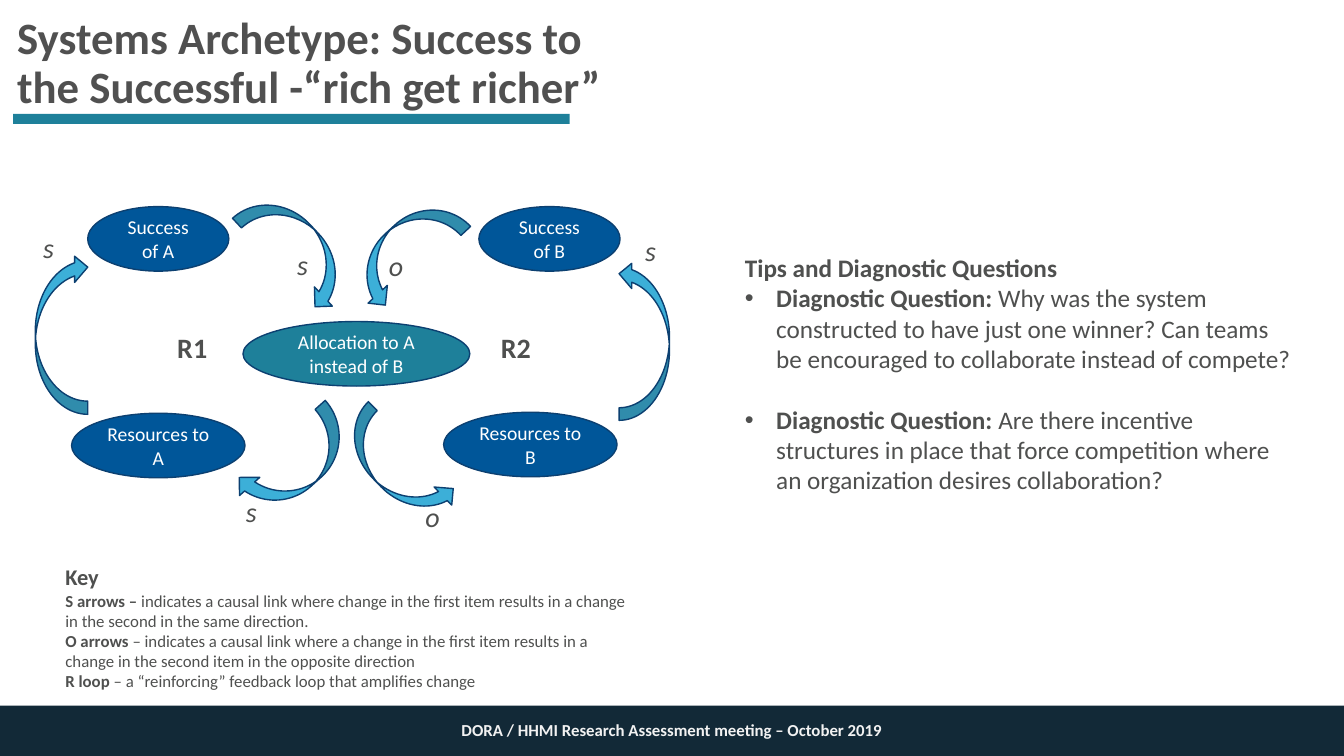
"""Build the "Success to the Successful" systems archetype slide."""
from dataclasses import dataclass

from lxml import etree
from pptx import Presentation
from pptx.dml.color import RGBColor
from pptx.enum.shapes import MSO_SHAPE
from pptx.enum.text import MSO_ANCHOR, MSO_AUTO_SIZE, PP_ALIGN
from pptx.oxml.ns import qn
from pptx.util import Inches, Pt

RECT, OVAL, ARROW = MSO_SHAPE.RECTANGLE, MSO_SHAPE.OVAL, MSO_SHAPE.CURVED_RIGHT_ARROW
LEFT, CENTER = PP_ALIGN.LEFT, PP_ALIGN.CENTER
TOP, MIDDLE = MSO_ANCHOR.TOP, MSO_ANCHOR.MIDDLE
NO_AUTOFIT = MSO_AUTO_SIZE.NONE


@dataclass(frozen=True)
class Theme:
    """Font, colours and type sizes of the slide."""
    font: str = "Calibri"
    heading: str = "505050"
    body: str = "4F504F"
    white: str = "FFFFFF"
    footer_ink: str = "F2F2F2"
    footer: str = "122937"
    teal: str = "1E809A"
    blue: str = "005699"
    sky: str = "3CAFD8"
    outline: str = "0C4071"
    title_size: int = 32
    label_size: int = 20
    tips_size: int = 18
    key_size: int = 16
    node_size: int = 14
    small_size: int = 12


THEME = Theme()
CELL = Inches(0.1)
COLUMNS, ROWS = 133.3, 75
FOOTER_ROW = 70
NODE_HEIGHT = 6.4
LABEL_HEIGHT = 5.1

TITLE = "Systems Archetype: Success to the Successful -“rich get richer”"
FOOTER = "DORA / HHMI Research Assessment meeting – October 2019"

TIPS_HEADING = "Tips and Diagnostic Questions"
TIPS = [
    [("Diagnostic Question:", True),
     (" Why was the system constructed to have just one winner? Can teams be "
      "encouraged to collaborate instead of compete?", False)],
    [("Diagnostic Question: ", True),
     ("Are there incentive structures in place that force competition where an "
      "organization desires collaboration?", False)],
]

KEY_HEADING = "Key"
KEY = [
    [("S arrows – ", True),
     ("indicates a causal link where change in the first item results in a "
      "change in the second in the same direction.", False)],
    [("O arrows ", True),
     ("– indicates a causal link where a change in the first item results in a "
      "change in the second item in the opposite direction", False)],
    [("R loop", True),
     (" – a “reinforcing” feedback loop that amplifies change", False)],
]

# (text, column, row, columns wide, fill)
NODES = [
    ("Allocation to A instead of B", 24.1, 31.9, 22.5, THEME.teal),
    ("Success of A", 8.7, 20.5, 14, THEME.blue),
    ("Success of B", 47.5, 20.5, 14, THEME.blue),
    ("Resources to A", 7.1, 41, 17.2, THEME.blue),
    ("Resources to B", 44, 40.9, 17.2, THEME.blue),
]

# (column, row, columns wide, rows high, rotation, mirrored)
ARROWS = [
    (26.9, 18.1, 5.2, 13.3, 317, True),
    (26.6, 39.6, 5.4, 12.8, 48.1, True),
    (3.5, 25.2, 5.2, 15.9, 180, True),
    (36.9, 39.7, 5, 13.3, 315.7, False),
    (61.4, 25.9, 5, 15.8, 180, False),
    (37.6, 18.5, 5.2, 12.8, 47.3, False),
]

LOOPS = [("R1", 16.6, 32.3), ("R2", 48.7, 32.3)]
LINKS = [
    ("s", 28.5, 24.1), ("s", 23.4, 48.6), ("s", 3.3, 22.4), ("s", 63, 22.7),
    ("o", 41.2, 49.1), ("o", 37.6, 24.2),
]


def cells(*counts):
    """Turn grid counts into lengths."""
    return [round(count * CELL) for count in counts]


def write(frame, text, size, color=THEME.body, bold=False, italic=False,
          align=LEFT, anchor=TOP, before=0, spacing=None, bullet=False):
    """Add one paragraph, given as a string or as (text, bold) runs."""
    frame.word_wrap = True
    frame.auto_size = NO_AUTOFIT
    frame.vertical_anchor = anchor
    paragraph = frame.paragraphs[0] if not frame.text else frame.add_paragraph()
    if bullet:
        properties = paragraph._p.get_or_add_pPr()
        properties.set("marL", str(Inches(0.31)))
        properties.set("indent", str(-Inches(0.31)))
        etree.SubElement(properties, qn("a:buFont")).set("typeface", "Arial")
        etree.SubElement(properties, qn("a:buChar")).set("char", "•")
    paragraph.alignment = align
    paragraph.space_before = Pt(before)
    if spacing:
        paragraph.line_spacing = spacing
    for words, strong in [(text, bold)] if isinstance(text, str) else text:
        run = paragraph.add_run()
        run.text = words
        run.font.name, run.font.size = THEME.font, Pt(size)
        run.font.bold, run.font.italic = strong, italic
        run.font.color.rgb = RGBColor.from_string(color)


def draw(slide, kind, place, fill, outline=None):
    """Add a flat preset shape on the grid."""
    shape = slide.shapes.add_shape(kind, *cells(*place))
    shape.shadow.inherit = False
    shape.fill.solid()
    shape.fill.fore_color.rgb = RGBColor.from_string(fill)
    if outline:
        shape.line.color.rgb = RGBColor.from_string(outline)
        shape.line.width = Pt(1)
    else:
        shape.line.fill.background()
    return shape


def text_area(slide, *place):
    """Add a text box on the grid and return its frame."""
    return slide.shapes.add_textbox(*cells(*place)).text_frame


def add_frame(slide):
    """Place the footer, the title and its rule."""
    draw(slide, RECT, (0, FOOTER_ROW, COLUMNS, ROWS - FOOTER_ROW), THEME.footer)
    write(text_area(slide, 0, 70.9, COLUMNS, 3), FOOTER, THEME.small_size,
          color=THEME.footer_ink, bold=True, align=CENTER)
    title = slide.shapes.title
    title.left, title.top, title.width, title.height = cells(0.7, 1.1, 63.3, 12.7)
    write(title.text_frame, TITLE, THEME.title_size, color=THEME.heading,
          bold=True, spacing=0.9)
    draw(slide, RECT, (1.3, 11.3, 55.2, 1), THEME.teal)


def add_notes_columns(slide):
    """Place the diagnostic questions and the key."""
    tips = text_area(slide, 72.9, 24.55, 56.9, 28)
    write(tips, TIPS_HEADING, THEME.tips_size, bold=True)
    for order, question in enumerate(TIPS):
        write(tips, question, THEME.tips_size, bullet=True, before=22 * order)
    key = text_area(slide, 5.5, 55.4, 58.1, 14.5)
    write(key, KEY_HEADING, THEME.key_size, bold=True)
    for entry in KEY:
        write(key, entry, THEME.small_size)


def add_diagram(slide):
    """Place the two reinforcing loops."""
    for text, column, row, width, fill in NODES:
        node = draw(slide, OVAL, (column, row, width, NODE_HEIGHT), fill, THEME.outline)
        write(node.text_frame, text, THEME.node_size, color=THEME.white,
              align=CENTER, anchor=MIDDLE)
    for *place, rotation, mirrored in ARROWS:
        arrow = draw(slide, ARROW, place, THEME.sky, THEME.outline)
        arrow.rotation = rotation
        if mirrored:
            arrow._element.spPr.find(qn("a:xfrm")).set("flipH", "1")
    for loop, column, row in LOOPS:
        write(text_area(slide, column, row, 6.7, LABEL_HEIGHT), loop,
              THEME.label_size, bold=True)
    for link, column, row in LINKS:
        write(text_area(slide, column, row, 4.6, LABEL_HEIGHT), link,
              THEME.label_size, italic=True)


def main():
    """Build and save the slide."""
    deck = Presentation()
    deck.slide_width, deck.slide_height = cells(COLUMNS, ROWS)
    slide = deck.slides.add_slide(deck.slide_layouts[5])
    add_frame(slide)
    add_notes_columns(slide)
    add_diagram(slide)
    deck.save("out.pptx")


if __name__ == "__main__":
    main()
